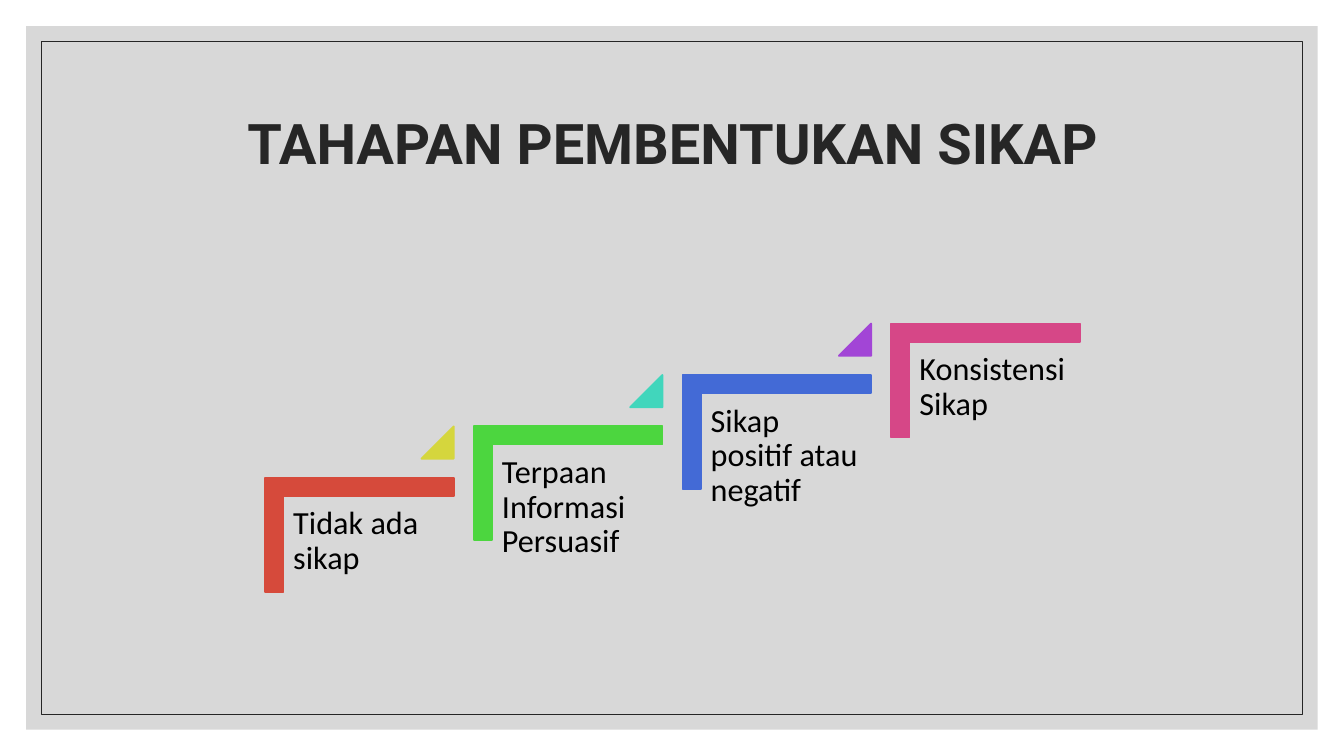
from lxml import etree
from pptx import Presentation
from pptx.dml.color import RGBColor
from pptx.enum.shapes import MSO_SHAPE
from pptx.enum.text import MSO_ANCHOR, PP_ALIGN
from pptx.oxml.ns import qn
from pptx.util import Inches, Pt

RECTANGLE = MSO_SHAPE.RECTANGLE
CORNER = MSO_SHAPE.CORNER
TRIANGLE = MSO_SHAPE.ISOSCELES_TRIANGLE
LEFT, CENTER = PP_ALIGN.LEFT, PP_ALIGN.CENTER
TOP, MIDDLE = MSO_ANCHOR.TOP, MSO_ANCHOR.MIDDLE

SLIDE_W, SLIDE_H = 13.33, 7.5
COLORS = {
    "panel": "BFBFBF", "ink": "262626", "label": "000000",
    "red": "D64A3B", "yellow": "D5D63D", "green": "4CD63F",
    "teal": "41D6BC", "blue": "436AD6", "purple": "A245D6", "pink": "D64787",
}

# Staircase grid: the first label's corner and the rise to each next step
STAIR_X, STAIR_Y = 2.81, 4.93
STEP_W, STEP_RISE = 2.07, 0.51
STEPS = [  # label, bracket colour, colour of the triangle leading onwards
    ("Tidak ada sikap", "red", "yellow"),
    ("Terpaan Informasi Persuasif", "green", "teal"),
    ("Sikap positif atau negatif", "blue", "purple"),
    ("Konsistensi Sikap", "pink", None),
]


def rgb(name):
    return RGBColor.from_string(COLORS[name])


def add_figure(slide, kind, box, fill=None, line=None, line_width=1.25):
    figure = slide.shapes.add_shape(kind, *map(Inches, box))
    figure.shadow.inherit = False
    if fill:
        figure.fill.solid()
        figure.fill.fore_color.rgb = rgb(fill)
    else:
        figure.fill.background()
    if line:
        figure.line.color.rgb = rgb(line)
        figure.line.width = Pt(line_width)
    else:
        figure.line.fill.background()
    return figure


def add_label(slide, text, box, font, size, color, bold=False,
              align=LEFT, anchor=TOP, inset=0.1):
    label = slide.shapes.add_textbox(*map(Inches, box))
    frame = label.text_frame
    frame.word_wrap = True
    frame.vertical_anchor = anchor
    frame.margin_left = frame.margin_right = Inches(0.1)
    frame.margin_top = frame.margin_bottom = Inches(inset)
    frame.text = text
    paragraph = frame.paragraphs[0]
    paragraph.alignment = align
    paragraph.line_spacing = 0.9
    run_font = paragraph.runs[0].font
    run_font.name = font
    run_font.size = Pt(size)
    run_font.bold = bold
    run_font.color.rgb = rgb(color)


def add_frame(slide):
    def inset_box(margin):
        return margin, margin, SLIDE_W - 2 * margin, SLIDE_H - 2 * margin

    panel = add_figure(slide, RECTANGLE, inset_box(0.26), fill="panel")
    panel_color = panel.fill._xPr.find(qn("a:solidFill"))[0]
    etree.SubElement(panel_color, qn("a:alpha"), val="60000")
    add_figure(slide, RECTANGLE, inset_box(0.41), line="ink", line_width=0.5)


def add_step(slide, index, text, bracket_color, triangle_color):
    x = STAIR_X + index * STEP_W
    y = STAIR_Y - index * STEP_RISE
    bracket = add_figure(slide, CORNER, (x + 0.19, y - 0.56, 1.13, 1.87),
                         bracket_color, bracket_color)
    bracket.rotation = 90
    bracket.adjustments[0] = bracket.adjustments[1] = 0.16
    add_label(slide, text, (x, y, 1.69, 1.48), "Calibri", 23, "label")
    if triangle_color:
        triangle = add_figure(slide, TRIANGLE, (x + 1.37, y - 0.7, 0.32, 0.32),
                              triangle_color, triangle_color)
        triangle.adjustments[0] = 1


def main():
    deck = Presentation()
    deck.slide_width, deck.slide_height = Inches(SLIDE_W), Inches(SLIDE_H)
    slide = deck.slides.add_slide(deck.slide_layouts[6])

    # Background panel and border
    add_frame(slide)

    # Staircase of stages
    for index, step in enumerate(STEPS):
        add_step(slide, index, *step)

    # Title
    add_label(slide, "TAHAPAN PEMBENTUKAN SIKAP", (1.17, 0.7, 11, 1.5),
              "Roboto", 40, "ink", bold=True, align=CENTER, anchor=MIDDLE, inset=0.05)

    deck.save("out.pptx")


if __name__ == "__main__":
    main()
